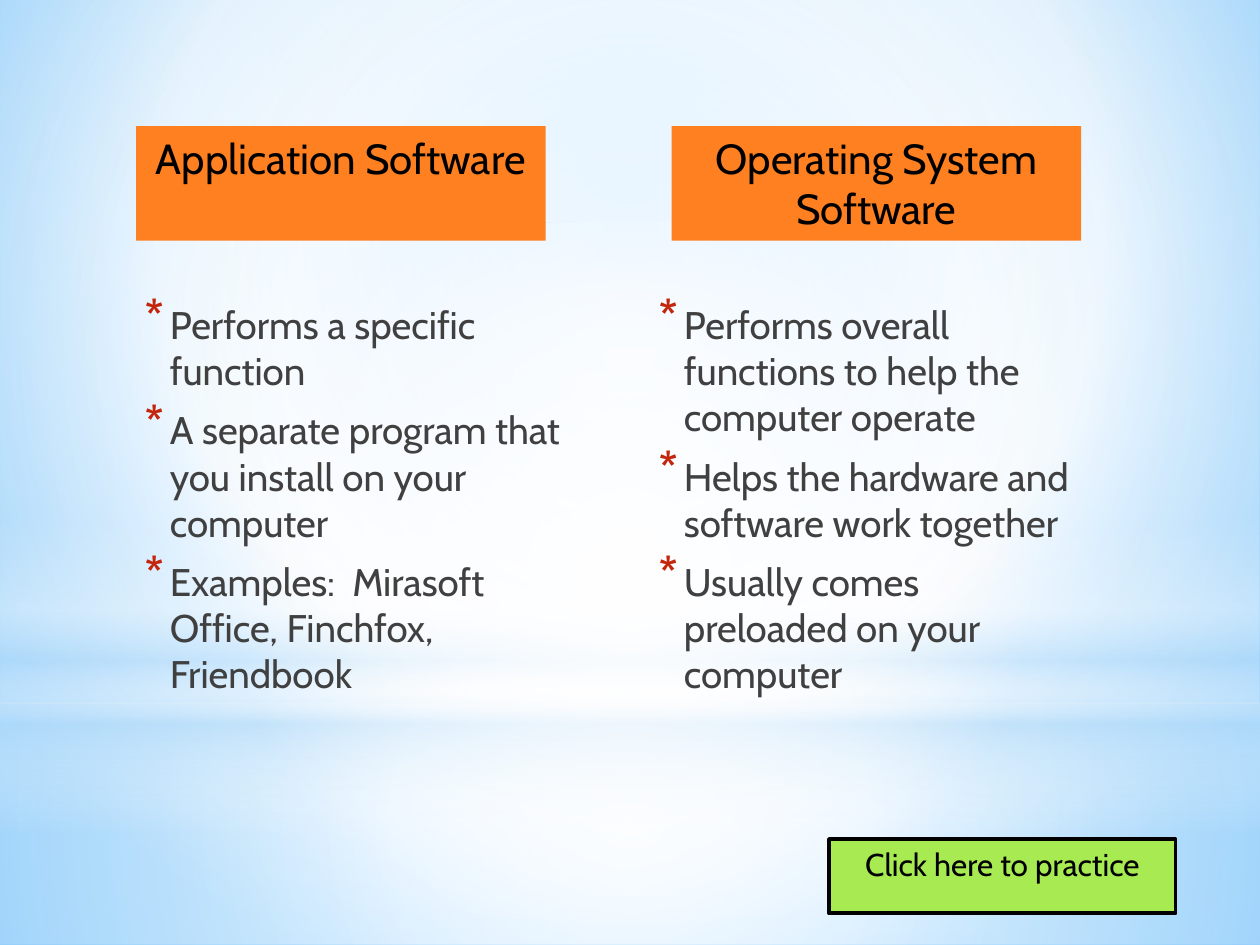
"""Build a slide that compares application software with operating system software."""
from dataclasses import dataclass
from typing import Optional

from lxml import etree
from pptx import Presentation
from pptx import util as u
from pptx.dml.color import RGBColor
from pptx.enum import shapes, text
from pptx.oxml import ns

PX = 9144
WIDTH, HEIGHT = 1000, 750


@dataclass(frozen=True)
class Theme:
    font: str = "Cabin"
    heading_size: int = 24
    body_size: int = 22
    button_size: int = 18
    ink: str = "000000"
    body: str = "404040"
    bullet: str = "C3260C"
    heading: str = "FF8021"
    button: str = "A7EA52"
    white: str = "FFFFFF"
    mist: str = "B4DCFA"
    sky: str = "9ED5FF"
    deep_sky: str = "5BB9FF"


THEME = Theme()


@dataclass(frozen=True)
class Stop:
    position: int
    color: str
    opacity: int = 100


@dataclass(frozen=True)
class Gradient:
    stops: tuple[Stop, ...]
    focus: Optional[tuple[int, int, int, int]] = (50, 50, 50, 50)
    angle: int = 90


@dataclass(frozen=True)
class Glow:
    top: int
    height: int
    gradient: Gradient
    kind: shapes.MSO_SHAPE = shapes.MSO_SHAPE.RECTANGLE


@dataclass(frozen=True)
class Label:
    wording: str
    box: tuple[int, int, int, int]
    fill: str
    size: int
    border: float = 0


@dataclass(frozen=True)
class BulletList:
    left: int
    items: tuple[str, ...]


BACKDROP = Gradient(
    (Stop(0, THEME.sky), Stop(60, THEME.white), Stop(100, THEME.deep_sky)), (20, 10, 20, 60))
GLOWS = (
    Glow(558, 192, Gradient((Stop(0, THEME.white, 91), Stop(37, THEME.white, 76),
                             Stop(100, THEME.mist, 79)))),
    Glow(0, 558, Gradient((Stop(0, THEME.white, 89), Stop(48, THEME.white, 62),
                           Stop(100, THEME.mist, 79)))),
    Glow(412, 250, Gradient((Stop(0, THEME.white, 0), Stop(29, THEME.white, 30),
                             Stop(45, THEME.mist, 40), Stop(55, THEME.white, 26),
                             Stop(65, THEME.mist, 60), Stop(100, THEME.white, 0)), None)),
    Glow(175, 558, Gradient((Stop(0, THEME.white), Stop(56, THEME.white, 0))),
         shapes.MSO_SHAPE.OVAL),
)
LISTS = (
    BulletList(100, ("Performs a specific function",
                     "A separate program that you install on your computer",
                     "Examples:  Mirasoft Office, Finchfox, Friendbook")),
    BulletList(508, ("Performs overall functions to help the computer operate",
                     "Helps the hardware and software work together",
                     "Usually comes preloaded on your computer")),
)
LABELS = (
    Label("Application Software", (108, 100, 325, 91), THEME.heading, THEME.heading_size),
    Label("Operating System Software", (533, 100, 325, 91), THEME.heading, THEME.heading_size),
    Label("Click here to practice", (658, 666, 275, 59), THEME.button, THEME.button_size, 2.25),
)


def scaled(*lengths: int) -> list[int]:
    return [length * PX for length in lengths]


def add_node(parent, tag: str, **attributes):
    values = {name: str(value) for name, value in attributes.items()}
    return etree.SubElement(parent, ns.qn(f"a:{tag}"), values)


def apply_gradient(owner, gradient: Gradient) -> None:
    solid = owner.find(ns.qn("a:solidFill"))
    fill = add_node(owner, "gradFill", rotWithShape=1)
    owner.replace(solid, fill)
    stop_list = add_node(fill, "gsLst")
    for stop in gradient.stops:
        color = add_node(add_node(stop_list, "gs", pos=stop.position * 1000),
                         "srgbClr", val=stop.color)
        if stop.opacity < 100:
            add_node(color, "alpha", val=stop.opacity * 1000)
    if gradient.focus:
        edges = dict(zip("ltrb", (edge * 1000 for edge in gradient.focus)))
        add_node(add_node(fill, "path", path="circle"), "fillToRect", **edges)
    else:
        add_node(fill, "lin", ang=gradient.angle * 60000, scaled=0)


def style_font(paragraph, size: int, color: str) -> None:
    paragraph.font.name = THEME.font
    paragraph.font.size = u.Pt(size)
    paragraph.font.color.rgb = RGBColor.from_string(color)


def add_filled_shape(slide, kind: shapes.MSO_SHAPE, box: tuple[int, ...], color: str):
    shape = slide.shapes.add_shape(kind, *scaled(*box))
    shape.shadow.inherit = False
    shape.fill.solid()
    shape.fill.fore_color.rgb = RGBColor.from_string(color)
    shape.line.fill.background()
    return shape


def add_glow(slide, glow: Glow) -> None:
    shape = add_filled_shape(slide, glow.kind, (0, glow.top, WIDTH, glow.height), THEME.white)
    apply_gradient(shape.element.spPr, glow.gradient)


def add_label(slide, label: Label) -> None:
    shape = add_filled_shape(slide, shapes.MSO_SHAPE.RECTANGLE, label.box, label.fill)
    if label.border:
        shape.line.color.rgb = RGBColor.from_string(THEME.ink)
        shape.line.width = u.Pt(label.border)
    frame = shape.text_frame
    frame.word_wrap = True
    frame.vertical_anchor = text.MSO_ANCHOR.TOP
    paragraph = frame.paragraphs[0]
    paragraph.text = label.wording
    paragraph.alignment = text.PP_ALIGN.CENTER
    style_font(paragraph, label.size, THEME.ink)


def add_bullet_list(slide, bullet_list: BulletList) -> None:
    frame = slide.shapes.add_textbox(*scaled(bullet_list.left, 234, 366, 380)).text_frame
    frame.word_wrap = True
    for index, item in enumerate(bullet_list.items):
        paragraph = frame.add_paragraph() if index else frame.paragraphs[0]
        paragraph.text = item
        paragraph.space_before = u.Pt(THEME.body_size * 0.2)
        paragraph.space_after = u.Pt(3)
        properties = paragraph._p.get_or_add_pPr()
        properties.set("marL", str(25 * PX))
        properties.set("indent", str(-20 * PX))
        add_node(add_node(properties, "buClr"), "srgbClr", val=THEME.bullet)
        add_node(properties, "buSzPct", val=130000)
        add_node(properties, "buChar", char="*")
        style_font(paragraph, THEME.body_size, THEME.body)


def main() -> None:
    presentation = Presentation()
    presentation.slide_width, presentation.slide_height = scaled(WIDTH, HEIGHT)
    slide = presentation.slides.add_slide(presentation.slide_layouts[6])
    slide.background.fill.solid()
    apply_gradient(slide.element.xpath(".//p:bgPr")[0], BACKDROP)
    for glow in GLOWS:
        add_glow(slide, glow)
    for bullet_list in LISTS:
        add_bullet_list(slide, bullet_list)
    for label in LABELS:
        add_label(slide, label)
    presentation.save("out.pptx")


if __name__ == "__main__":
    main()
